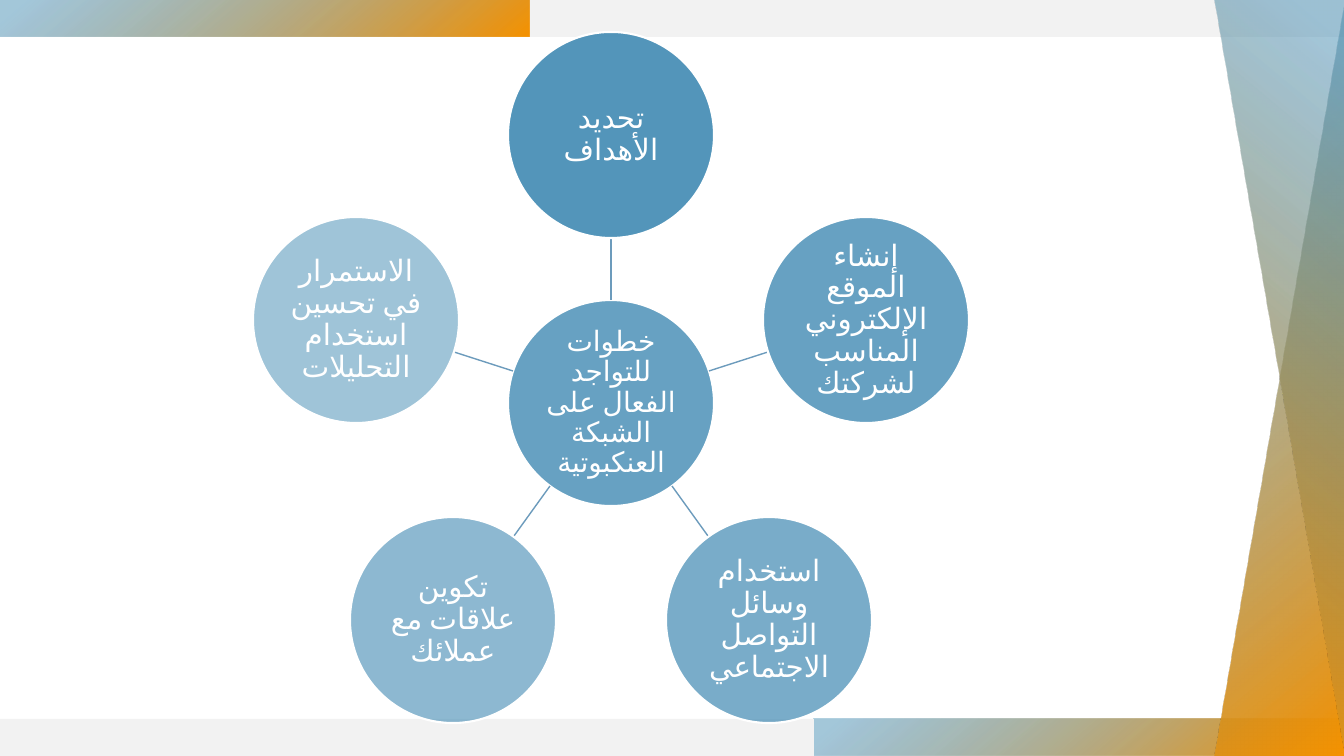
import math
from dataclasses import dataclass

from lxml import etree
from pptx import Presentation
from pptx import util as u
from pptx.dml.color import RGBColor
from pptx.enum import lang, shapes, text
from pptx.oxml.ns import qn

WIDE, HIGH = 1344, 756
SCALE = 12192000 / WIDE
BAR, SPLIT, EDGE = 37, 530, 1215
HUB, ORBIT, RADIUS = (611, 403), 268, 103
CENTRE = "خطوات للتواجد الفعال على الشبكة العنكبوتية"
STEPS = [
    "تحديد الأهداف",
    "إنشاء الموقع الإلكتروني المناسب لشركتك",
    "استخدام وسائل التواصل الاجتماعي",
    "تكوين علاقات مع عملائك",
    "الاستمرار في تحسين استخدام التحليلات",
]


@dataclass(frozen=True)
class Theme:
    blue: str = "418AB3"
    orange: str = "F69200"
    grey: str = "F2F2F2"
    white: str = "FFFFFF"
    spoke: str = "6C9BBC"
    font: str = "Roboto"
    hub: int = 20
    step: int = 21


THEME = Theme()


def px(n):
    return u.Emu(round(n * SCALE))


def rgb(code):
    return RGBColor.from_string(code)


def fade(shape, percent):
    colour = shape.element.spPr.find(".//" + qn("a:srgbClr"))
    etree.SubElement(colour, qn("a:alpha")).set("val", str(percent * 1000))


def blend(shape, angle=310):
    shape.fill.gradient()
    shape.fill.gradient_angle = angle
    stops = zip(shape.fill.gradient_stops, (0.05, 1), (THEME.blue, THEME.orange))
    for stop, place, code in stops:
        stop.position = place
        stop.color.rgb = rgb(code)
    fade(shape, 48)


def plain(shape):
    shape.shadow.inherit = False
    shape.line.fill.background()
    return shape


def bar(slide, x, y, width):
    box = [px(n) for n in (x, y, width, BAR)]
    return plain(slide.shapes.add_shape(shapes.MSO_SHAPE.RECTANGLE, *box))


def wedge(slide, angle, *points):
    first, *rest = points
    path = slide.shapes.build_freeform(*first, scale=SCALE)
    path.add_line_segments(rest, close=True)
    blend(plain(path.convert_to_shape()), angle)


def frame(slide):
    blend(bar(slide, 0, 0, SPLIT))
    blend(bar(slide, WIDE - SPLIT, HIGH - BAR, SPLIT))
    for x, y in ((SPLIT, 0), (0, HIGH - BAR)):
        strip = bar(slide, x, y, WIDE - SPLIT)
        strip.fill.solid()
        strip.fill.fore_color.rgb = rgb(THEME.grey)
    wedge(slide, 310, (EDGE, HIGH), (WIDE, HIGH), (WIDE, 0))
    wedge(slide, 230, (EDGE, 0), (WIDE, 0), (WIDE, HIGH))


def label(shape, words, size):
    frame = shape.text_frame
    frame.word_wrap = True
    frame.vertical_anchor = text.MSO_ANCHOR.MIDDLE
    frame.margin_left = frame.margin_right = px(1)
    frame.margin_top = frame.margin_bottom = px(1)
    para = frame.paragraphs[0]
    para.text = words
    para.runs[0].font.language_id = lang.MSO_LANGUAGE_ID.ARABIC
    para.alignment = text.PP_ALIGN.CENTER
    para.line_spacing = 0.9
    props = para._p.get_or_add_pPr()
    props.set("rtl", "1")
    font = para.font
    font.name = THEME.font
    font.size = u.Pt(size)
    font.color.rgb = rgb(THEME.white)
    script = etree.SubElement(props.find(qn("a:defRPr")), qn("a:cs"))
    script.set("typeface", THEME.font)


def disc(slide, centre, words, size, percent):
    x, y = centre
    box = [px(n) for n in (x - RADIUS, y - RADIUS, 2 * RADIUS, 2 * RADIUS)]
    shape = slide.shapes.add_shape(shapes.MSO_SHAPE.OVAL, *box)
    shape.shadow.inherit = False
    shape.fill.solid()
    shape.fill.fore_color.rgb = rgb(THEME.blue)
    fade(shape, percent)
    shape.line.color.rgb = rgb(THEME.white)
    shape.line.width = u.Pt(1.5)
    label(shape, words, size)


def polar(reach, angle):
    x, y = HUB
    return round(x + reach * math.sin(angle)), round(y - reach * math.cos(angle))


def spoke(slide, angle):
    ends = polar(RADIUS, angle) + polar(ORBIT - RADIUS, angle)
    line = slide.shapes.add_connector(
        shapes.MSO_CONNECTOR.STRAIGHT, *[px(n) for n in ends]
    )
    line.line.color.rgb = rgb(THEME.spoke)
    line.line.width = u.Pt(1)
    etree.SubElement(line.element.spPr, qn("a:effectLst"))


def main():
    deck = Presentation()
    deck.slide_width, deck.slide_height = px(WIDE), px(HIGH)
    slide = deck.slides.add_slide(deck.slide_layouts[6])
    frame(slide)
    disc(slide, HUB, CENTRE, THEME.hub, 80)
    for i, words in enumerate(STEPS):
        angle = math.tau * i / len(STEPS)
        spoke(slide, angle)
        disc(slide, polar(ORBIT, angle), words, THEME.step, 90 - 10 * i)
    deck.save("out.pptx")


if __name__ == "__main__":
    main()
